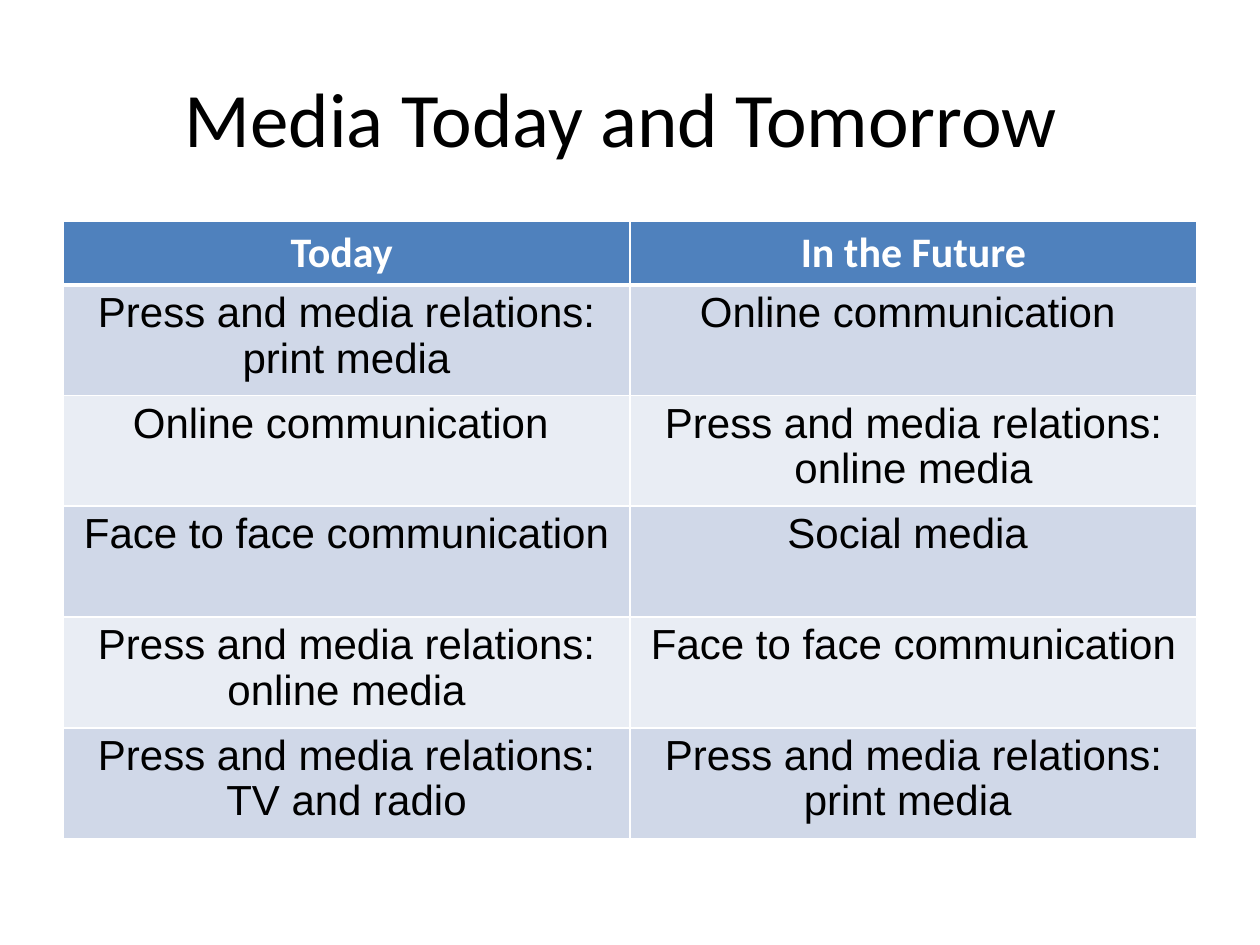
"""Build a slide comparing media channels today and in the future."""
import pptx
import pptx.dml.color
import pptx.enum.text
import pptx.oxml
import pptx.oxml.ns
import pptx.util

RGBColor = pptx.dml.color.RGBColor
BLACK = RGBColor(0x00, 0x00, 0x00)
WHITE = RGBColor(0xFF, 0xFF, 0xFF)
HEADER_BLUE = RGBColor(0x4F, 0x81, 0xBD)
BANDS = [RGBColor(0xE9, 0xED, 0xF4), RGBColor(0xD0, 0xD8, 0xE8)]

ROWS = [
    ("Today ", "In the Future"),
    ("Press and media relations: print media", "Online communication "),
    ("Online communication ", "Press and media relations: online media"),
    ("Face to face communication", "Social media "),
    ("Press and media relations: online media", "Face to face communication"),
    ("Press and media relations: TV and radio", "Press and media relations: print media "),
]
ROW_HEIGHTS = [64, 106, 106, 111, 111, 106]
COLUMN_WIDTH = 567


def px(length):
    return pptx.util.Emu(round(length * 914400 / 126))


def style(paragraph, font_name, size, color, bold=False):
    paragraph.alignment = pptx.enum.text.PP_ALIGN.CENTER
    paragraph.font.name = font_name
    paragraph.font.size = pptx.util.Pt(size)
    paragraph.font.color.rgb = color
    paragraph.font.bold = bold


deck = pptx.Presentation()
deck.slide_width, deck.slide_height = px(1260), px(945)
page = deck.slides.add_slide(deck.slide_layouts[6])

title = page.shapes.add_textbox(px(63), px(38), px(1134), px(158)).text_frame
title.word_wrap = True
title.vertical_anchor = pptx.enum.text.MSO_ANCHOR.MIDDLE
title.text = "Media Today and Tomorrow "
style(title.paragraphs[0], "Calibri", 44, BLACK)

table = page.shapes.add_table(
    len(ROWS), 2, px(63), px(221), px(2 * COLUMN_WIDTH), px(sum(ROW_HEIGHTS))
).table
for column in table.columns:
    column.width = px(COLUMN_WIDTH)

for row_index, (texts, height) in enumerate(zip(ROWS, ROW_HEIGHTS)):
    table.rows[row_index].height = px(height)
    for column_index, text in enumerate(texts):
        cell = table.cell(row_index, column_index)
        cell.text = text
        para = cell.text_frame.paragraphs[0]
        if row_index == 0:
            style(para, "Calibri", 24, WHITE, bold=True)
        else:
            style(para, "Arial", 24, BLACK)
            para.line_spacing = 0.97
        properties = cell._tc.get_or_add_tcPr()
        for side in "LRTB":
            thick = (row_index, side) in ((0, "B"), (1, "T"))
            properties.append(pptx.oxml.parse_xml(
                f'<a:ln{side} {pptx.oxml.ns.nsdecls("a")} w="{pptx.util.Pt(3 if thick else 1)}">'
                f'<a:solidFill><a:srgbClr val="{WHITE}"/></a:solidFill></a:ln{side}>'
            ))
        cell.fill.solid()
        cell.fill.fore_color.rgb = BANDS[row_index % 2] if row_index else HEADER_BLUE

deck.save("out.pptx")
